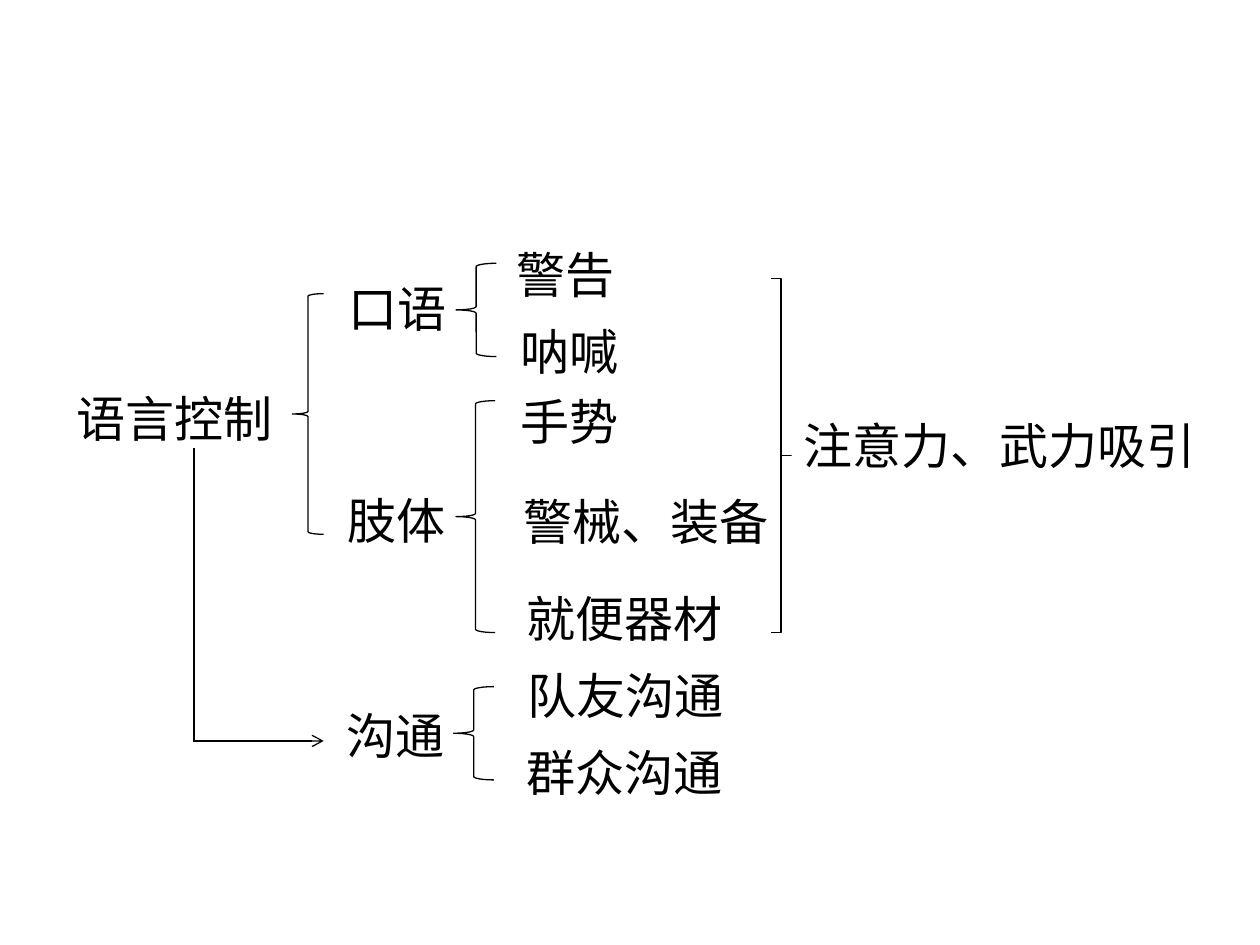
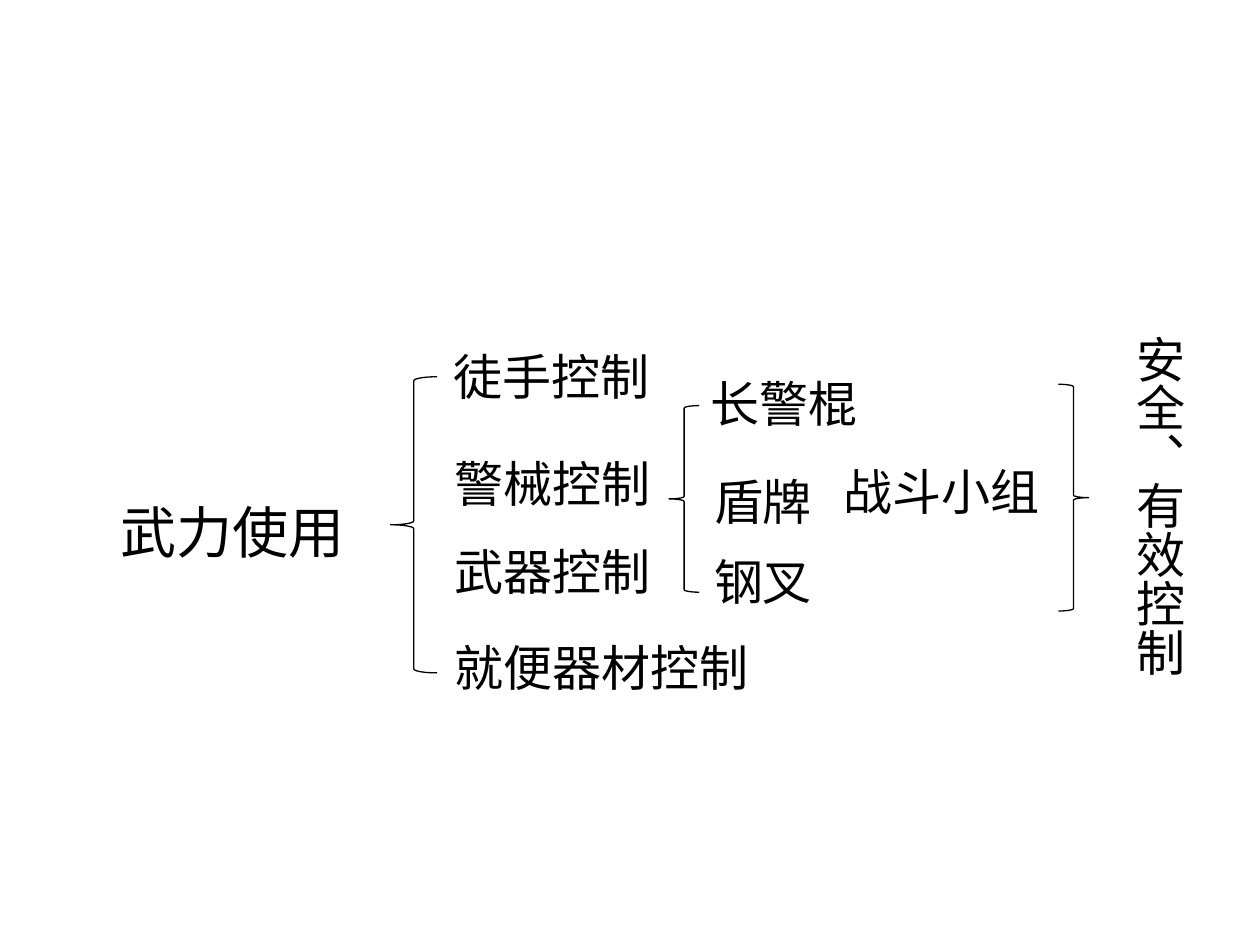
from collections import namedtuple

from lxml import etree
from pptx import Presentation
from pptx import util as u
from pptx.dml.color import RGBColor
from pptx.enum import shapes, text
from pptx.oxml import ns

BLACK = RGBColor(0, 0, 0)
WHITE = RGBColor(255, 255, 255)
FONT = "Noto Sans CJK SC"
LABEL_HEIGHT = 43.2
Box = namedtuple("Box", "left top width height")
PANEL = Box(31.7, 90, 656.6, 408.2)
LEFT = shapes.MSO_SHAPE.LEFT_BRACE
RIGHT = shapes.MSO_SHAPE.RIGHT_BRACE


def place(box, left, top, width, height):
    """Turn offsets inside a box into a position on the page."""
    return [u.Pt(value) for value in (box.left + left, box.top + top, width, height)]


def add_panel(page, box):
    """Draw the nearly opaque white rounded panel."""
    panel = page.shapes.add_shape(shapes.MSO_SHAPE.ROUNDED_RECTANGLE, *place(box, 0, 0, box.width, box.height))
    panel.adjustments[0] = 0.07
    panel.shadow.inherit = False
    panel.fill.solid()
    panel.fill.fore_color.rgb = WHITE
    panel.line.fill.background()
    color = panel.fill._xPr.find(".//" + ns.qn("a:srgbClr"))
    etree.SubElement(color, ns.qn("a:alpha"), val="91000")


def add_label(page, box, words, left, top, width, height=LABEL_HEIGHT, size=28, vertical=False):
    """Write one label, across or downwards."""
    label = page.shapes.add_textbox(*place(box, left, top, width, height))
    frame = label.text_frame
    for name, value in {"word_wrap": True, "auto_size": text.MSO_AUTO_SIZE.SHAPE_TO_FIT_TEXT}.items():
        setattr(frame, name, value)
    if vertical:
        frame._txBody.bodyPr.set("vert", "eaVert")
    span = frame.paragraphs[0].add_run()
    span.text = words
    for name, value in {"size": u.Pt(size), "name": FONT}.items():
        setattr(span.font, name, value)
    span.font.color.rgb = BLACK
    etree.SubElement(span.font._element, ns.qn("a:ea"), typeface=FONT)


def style_line(line):
    """Give an outline the common thin black stroke."""
    line.color.rgb = BLACK
    line.width = u.Pt(0.75)


def add_brace(page, box, kind, left, top, width, height, curve=None):
    """Draw a brace that gathers a group of labels."""
    brace = page.shapes.add_shape(kind, *place(box, left, top, width, height))
    if curve is not None:
        brace.adjustments[0] = curve
    brace.shadow.inherit = False
    brace.fill.background()
    style_line(brace.line)


def add_branch(page, box, brace, labels):
    """Draw a left brace followed by its labels."""
    add_brace(page, box, LEFT, *brace)
    for label in labels:
        add_label(page, box, *label)


def add_line(page, box, start, end, arrow=False):
    """Draw a straight line, with an arrowhead at its end on request."""
    points = place(box, *start, 0, 0)[:2] + place(box, *end, 0, 0)[:2]
    line = page.shapes.add_connector(shapes.MSO_CONNECTOR.STRAIGHT, *points)
    style_line(line.line)
    if arrow:
        etree.SubElement(line.line._get_or_add_ln(), ns.qn("a:tailEnd"), type="arrow")
    etree.SubElement(line._element.spPr, ns.qn("a:effectLst"))


def add_language_control(page, box):
    """Lay out the tree of verbal and bodily control."""
    add_label(page, box, "语言控制", 5, 128.2, 154)
    add_branch(page, box, (135.3, 77.8, 18, 137.5), [
        ("口语", 160.5, 65.5, 90),
        ("肢体", 159.8, 186.5, 91.4),
    ])
    add_branch(page, box, (228.9, 60.5, 23, 53.3), [
        ("警告", 256.3, 46.1, 127.4),
        ("呐喊", 258.5, 90, 75.6),
    ])
    add_branch(page, box, (228.9, 139, 22.3, 132.5), [
        ("手势", 258.5, 130.3, 90.7),
        ("警械、装备", 260.6, 187.2, 179.3),
        ("就便器材", 262.1, 242.6, 135.4),
    ])
    add_brace(page, box, RIGHT, 408.9, 69.1, 11.5, 202.3, curve=0)
    add_label(page, box, "注意力、武力吸引", 420.5, 144, 254.2)
    add_line(page, box, (79.2, 166.3), (79.2, 333.4))
    add_line(page, box, (78.5, 333.4), (153.3, 333.4), arrow=True)
    add_label(page, box, "沟通", 159.1, 309.6, 91.4)
    add_branch(page, box, (227.5, 302.4, 23, 53.3), [
        ("队友沟通", 262.8, 286.6, 127.4),
        ("群众沟通", 262.1, 330.5, 127.4),
    ])


def add_use_of_force(page, box):
    """Lay out the tree of means of force and their aim."""
    add_label(page, box, "武力使用", 30.2, 190.8, 168.5, 48.2, size=32)
    add_branch(page, box, (191.5, 125.3, 26.6, 169.2), [
        ("徒手控制", 220.3, 104.4, 147),
        ("警械控制", 221, 165.6, 134.6),
        ("武器控制", 221, 216, 147),
        ("就便器材控制", 221, 270.7, 216),
    ])
    add_branch(page, box, (350.6, 141.8, 17.3, 106.6), [
        ("长警棍", 367.2, 120.2, 147),
        ("盾牌", 369.3, 175.7, 147),
        ("钢叉", 369.3, 221.8, 147),
    ])
    add_label(page, box, "战斗小组", 443.5, 169.9, 147)
    add_brace(page, box, RIGHT, 573.1, 129.6, 17.3, 129.6)
    add_label(page, box, "安全、有效控制", 571.7, 94.3, 79.2, 241.9, vertical=True)


def main():
    """Build and save the deck."""
    deck = Presentation()
    deck.slide_width, deck.slide_height = u.Pt(720), u.Pt(540)
    for add_diagram in (add_language_control, add_use_of_force):
        page = deck.slides.add_slide(deck.slide_layouts[6])
        page.background.fill.solid()
        page.background.fill.fore_color.rgb = WHITE
        add_panel(page, PANEL)
        add_diagram(page, PANEL)
    deck.save("out.pptx")


if __name__ == "__main__":
    main()
